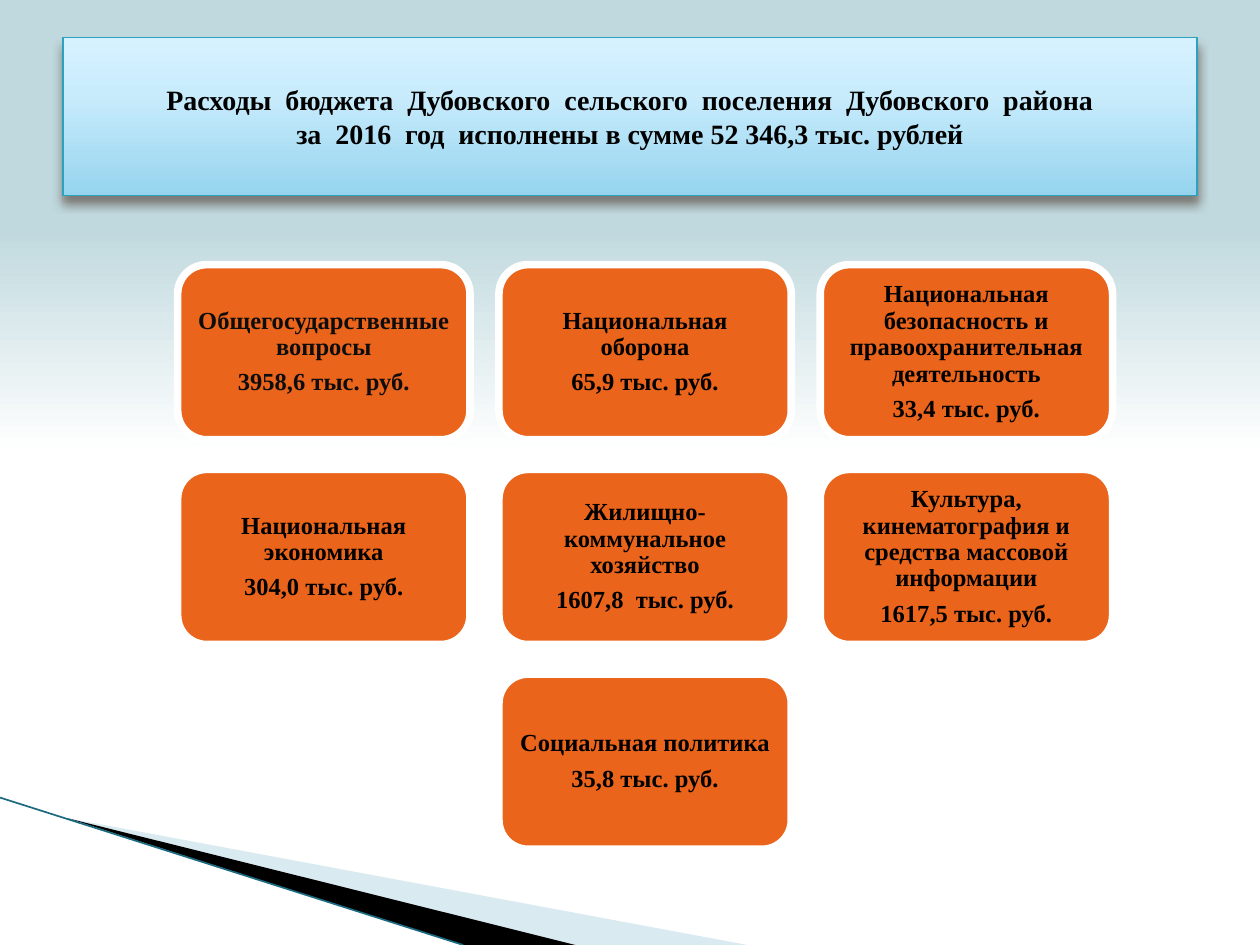
from lxml import etree
from pptx import Presentation
from pptx.dml.color import RGBColor
from pptx.enum.shapes import MSO_CONNECTOR, MSO_SHAPE
from pptx.enum.text import MSO_ANCHOR, PP_ALIGN
from pptx.oxml.ns import qn
from pptx.util import Inches, Pt

CARD = MSO_SHAPE.FLOWCHART_ALTERNATE_PROCESS
LINE = MSO_CONNECTOR.STRAIGHT
MID, CENTER = MSO_ANCHOR.MIDDLE, PP_ALIGN.CENTER
FONT = "Times New Roman"
HEX = {
    "black": "000000", "soft": "0D0D0D", "white": "FFFFFF",
    "card": "EB641B", "edge": "2DA2BF", "shade": "4E3B30",
    "wedge": "A0CBDC", "rule": "1A6A80",
}
SKY = [(0, "C0D9DE"), (24, "C0D9DE"), (48, "FFFFFF"), (100, "FFFFFF")]
BAND = [(0, "96D4EE"), (65, "C9ECFC"), (100, "D7F2FF")]
HEAD = ("Расходы  бюджета  Дубовского  сельского  поселения  Дубовского  района\v"
        "за  2016  год  исполнены в сумме 52 346,3 тыс. рублей")
COSTS = [
    (0, 0, "Общегосударственные вопросы", "3958,6 тыс. руб."),
    (1, 0, "Национальная оборона", "65,9 тыс. руб."),
    (2, 0, "Национальная безопасность и правоохранительная деятельность",
     "33,4 тыс. руб."),
    (0, 1, "Национальная экономика", "304,0 тыс. руб."),
    (1, 1, "Жилищно-коммунальное хозяйство", "1607,8  тыс. руб."),
    (2, 1, "Культура, кинематография и средства массовой информации",
     "1617,5 тыс. руб."),
    (1, 2, "Социальная политика", "35,8 тыс. руб."),
]


def color(name):
    """Return the named colour."""
    return RGBColor.from_string(HEX[name])


def node(root, tag, **attrs):
    """Add a drawing element with its attributes."""
    return etree.SubElement(root, qn(tag), {k: str(v) for k, v in attrs.items()})


def blend(fill, root, stops, angle):
    """Give a fill a linear gradient."""
    fill.gradient()
    grad = root.xpath(".//a:gradFill")[0]
    items = grad.find(qn("a:gsLst"))
    for old in list(items):
        items.remove(old)
    for pos, tone in stops:
        node(node(items, "a:gs", pos=pos * 1000), "a:srgbClr", val=tone)
    grad.find(qn("a:lin")).set("ang", str(angle * 60000))


def write(shape, lines, size=14, tone="black", inset=0.06, space=1.0, gap=0):
    """Write centred bold paragraphs into a shape."""
    frame = shape.text_frame
    frame.word_wrap = True
    frame.vertical_anchor = MID
    frame.margin_left = frame.margin_right = Inches(inset)
    frame.margin_top = frame.margin_bottom = Inches(inset)
    for i, line in enumerate(lines):
        para = frame.add_paragraph() if i else frame.paragraphs[0]
        para.text = line
        para.alignment = CENTER
        para.line_spacing = space
        para.space_before = Pt(gap if i else 0)
        for run in para.runs:
            font = run.font
            font.name, font.size, font.bold = FONT, Pt(size), True
            font.color.rgb = color(tone)


def banner(slide, left, top, width, height):
    """Format the title as a shaded band."""
    title = slide.shapes.title
    title.left, title.top, title.width, title.height = left, top, width, height
    props = title._element.spPr
    blend(title.fill, props, BAND, 270)
    title.line.color.rgb = color("edge")
    title.line.width = Pt(0.75)
    cast = node(node(props, "a:effectLst"), "a:outerShdw", blurRad=Pt(6),
                dist=Pt(4), dir=90 * 60000, algn="t", rotWithShape=0)
    node(node(cast, "a:srgbClr", val=HEX["shade"]), "a:alpha", val=60000)
    write(title, [HEAD], size=16, inset=0.1)


def cards(slide, left, top, width, height):
    """Place the cost cards on a grid of three columns and rows."""
    wide, high = Inches(2.32), Inches(1.39)
    across, down = (width - wide) / 2, (height - high) / 2
    for i, (col, row, name, cost) in enumerate(COSTS):
        card = slide.shapes.add_shape(
            CARD, int(left + col * across), int(top + row * down), wide, high)
        card.shadow.inherit = False
        card.fill.solid()
        card.fill.fore_color.rgb = color("card")
        card.line.color.rgb = color("white")
        card.line.width = Pt(4.33)
        write(card, [name, cost], tone="black" if i else "soft",
              space=0.9, gap=5)


def wedge(slide, points, tone, alpha=100):
    """Draw one filled sliver."""
    form = slide.shapes.build_freeform(*points[0])
    form.add_line_segments(points[1:])
    shape = form.convert_to_shape()
    shape.shadow.inherit = False
    shape.fill.solid()
    shape.fill.fore_color.rgb = color(tone)
    shape.line.fill.background()
    if alpha < 100:
        paint = shape._element.spPr.xpath("./a:solidFill/a:srgbClr")[0]
        node(paint, "a:alpha", val=alpha * 1000)


def corner(slide, left, top, width, height):
    """Draw the slivers and the rule in the lower left corner."""
    def spot(x, y):
        return int(left + x * width), int(top + y * height)

    tip = spot(0.09, 0.14)
    wedge(slide, [tip, spot(1, 1), spot(0.76, 1)], "wedge", alpha=40)
    wedge(slide, [tip, spot(0.77, 1), spot(0.62, 1)], "black")
    rule = slide.shapes.add_connector(LINE, *spot(0, 0), *spot(0.62, 1))
    rule.line.color.rgb = color("rule")
    rule.line.width = Pt(0.95)
    node(rule._element.spPr, "a:effectLst")


def main():
    """Build the slide and save it."""
    deck = Presentation()
    deck.slide_width, deck.slide_height = Inches(10), Inches(7.5)
    slide = deck.slides.add_slide(deck.slide_layouts[5])
    blend(slide.background.fill, slide._element, SKY, 90)
    corner(slide, 0, Inches(6.33), Inches(5.93), Inches(1.17))
    banner(slide, Inches(0.5), Inches(0.3), Inches(9), Inches(1.25))
    cards(slide, Inches(1.41), Inches(2.1), Inches(7.42), Inches(4.64))
    deck.save("out.pptx")


if __name__ == "__main__":
    main()
